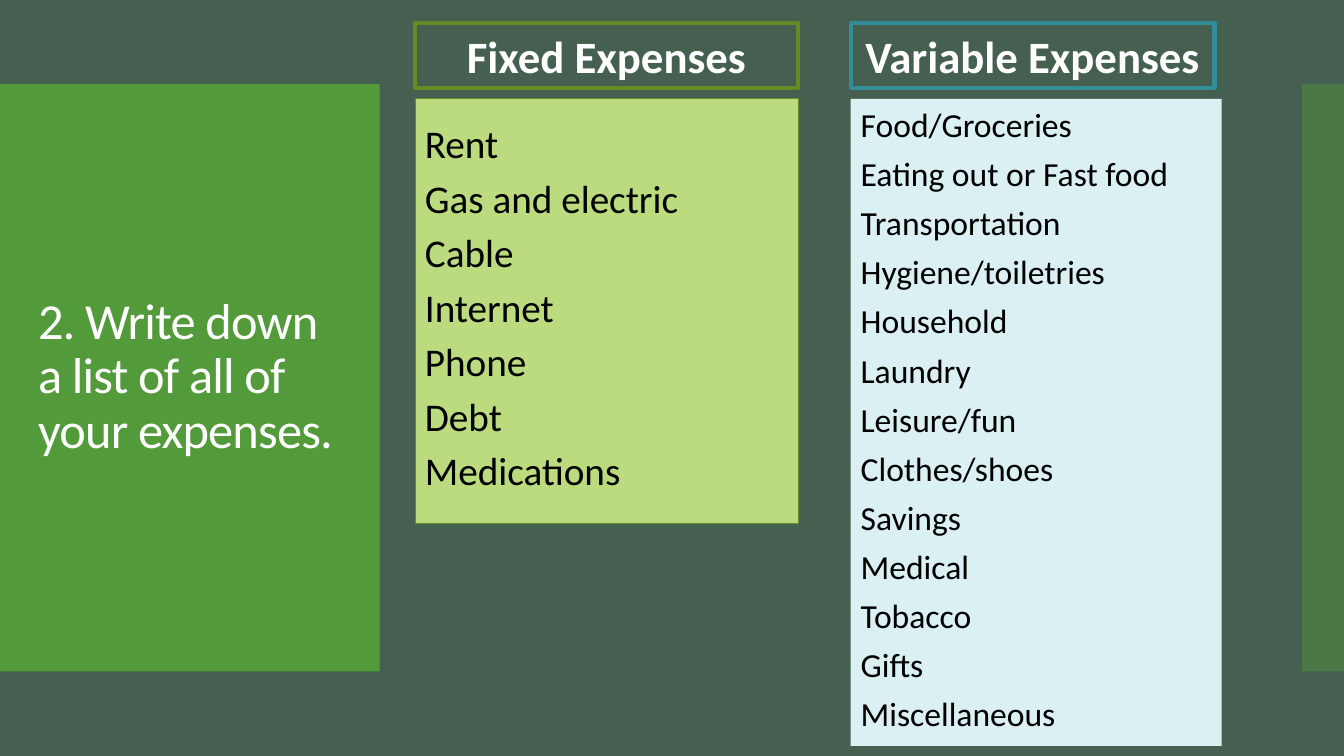
from dataclasses import dataclass

from lxml import etree
from pptx import Presentation
from pptx.dml.color import RGBColor
from pptx.enum import shapes, text
from pptx.oxml import ns
from pptx.shapes.autoshape import Shape
from pptx.slide import Slide
from pptx.util import Cm, Pt

FONT = "Calibri"
SLATE = RGBColor(0x45, 0x5F, 0x51)
GREEN = RGBColor(0x54, 0x9E, 0x39)
OLIVE = RGBColor(0x67, 0x8A, 0x26)
LIME = RGBColor(0xBB, 0xDB, 0x7E)
TEAL = RGBColor(0x32, 0x8C, 0x99)
ICE = RGBColor(0xDB, 0xF0, 0xF3)
WHITE = RGBColor(0xFF, 0xFF, 0xFF)
BLACK = RGBColor(0x00, 0x00, 0x00)

HEADING_TOP, HEADING_HEIGHT = 0.58, 1.63
LIST_TOP = 2.49
PANEL_TOP, PANEL_HEIGHT = 2.12, 14.8


@dataclass
class Box:
    left: float
    top: float
    width: float
    height: float
    fill: RGBColor | None = None
    line: RGBColor | None = None
    line_width: float = 0


@dataclass
class TextStyle:
    size: float
    color: RGBColor
    bold: bool = False
    align: text.PP_ALIGN = text.PP_ALIGN.LEFT
    line_spacing: float = 1.0
    space_before: float = 0


@dataclass
class ExpenseColumn:
    heading: str
    heading_box: Box
    items: list[str]
    list_box: Box
    item_size: float


COLUMNS = [
    ExpenseColumn(
        "Fixed Expenses",
        Box(10.46, HEADING_TOP, 9.65, HEADING_HEIGHT, line=OLIVE, line_width=3),
        ["Rent", "Gas and electric", "Cable", "Internet", "Phone", "Debt", "Medications"],
        Box(10.46, LIST_TOP, 9.65, 10.69, LIME, OLIVE, 0.5),
        28,
    ),
    ExpenseColumn(
        "Variable Expenses",
        Box(21.44, HEADING_TOP, 9.17, HEADING_HEIGHT, line=TEAL, line_width=3),
        ["Food/Groceries", "Eating out or Fast food", "Transportation",
         "Hygiene/toiletries", "Household", "Laundry", "Leisure/fun",
         "Clothes/shoes", "Savings", "Medical", "Tobacco", "Gifts", "Miscellaneous"],
        Box(21.44, LIST_TOP, 9.35, 16.31, ICE),
        24,
    ),
]


def add_box(slide: Slide, box: Box) -> Shape:
    shape = slide.shapes.add_shape(
        shapes.MSO_SHAPE.RECTANGLE,
        Cm(box.left), Cm(box.top), Cm(box.width), Cm(box.height),
    )
    shape.shadow.inherit = False
    if box.fill is None:
        shape.fill.background()
    else:
        shape.fill.solid()
        shape.fill.fore_color.rgb = box.fill
    if box.line is None:
        shape.line.fill.background()
    else:
        shape.line.color.rgb = box.line
        shape.line.width = Pt(box.line_width)
    return shape


def add_panel(slide: Slide, left: float, width: float, opacity: int) -> None:
    panel = add_box(slide, Box(left, PANEL_TOP, width, PANEL_HEIGHT, GREEN))
    color = panel.fill._xPr.find(".//" + ns.qn("a:srgbClr"))
    etree.SubElement(color, ns.qn("a:alpha")).set("val", str(opacity * 1000))


def write_lines(shape: Shape, lines: list[str], style: TextStyle) -> None:
    frame = shape.text_frame
    frame.word_wrap = True
    frame.vertical_anchor = text.MSO_ANCHOR.MIDDLE
    frame.text = "\n".join(lines)
    for paragraph in frame.paragraphs:
        paragraph.alignment = style.align
        paragraph.line_spacing = style.line_spacing
        paragraph.space_before = Pt(style.space_before)
        paragraph.font.name = FONT
        paragraph.font.size = Pt(style.size)
        paragraph.font.bold = style.bold
        paragraph.font.color.rgb = style.color


def add_title(slide: Slide) -> None:
    title = slide.shapes.add_textbox(Cm(0.71), Cm(3.12), Cm(8.18), Cm(12.78))
    write_lines(title, ["2. Write down a list of all of your expenses."],
                TextStyle(36, WHITE, line_spacing=0.9))
    run = title.text_frame.paragraphs[0].runs[0]
    run.font._element.set("spc", "-60")


def add_column(slide: Slide, column: ExpenseColumn) -> None:
    write_lines(add_box(slide, column.list_box), column.items,
                TextStyle(column.item_size, BLACK, line_spacing=0.8, space_before=12))
    write_lines(add_box(slide, column.heading_box), [column.heading],
                TextStyle(32, WHITE, bold=True, align=text.PP_ALIGN.CENTER))


def main() -> None:
    presentation = Presentation()
    presentation.slide_width = Cm(33.87)
    presentation.slide_height = Cm(19.05)
    slide = presentation.slides.add_slide(presentation.slide_layouts[6])
    slide.background.fill.solid()
    slide.background.fill.fore_color.rgb = SLATE

    add_panel(slide, 0, 9.57, 95)
    add_panel(slide, 32.81, 1.06, 40)
    add_title(slide)
    for column in COLUMNS:
        add_column(slide, column)

    presentation.save("out.pptx")


if __name__ == "__main__":
    main()
